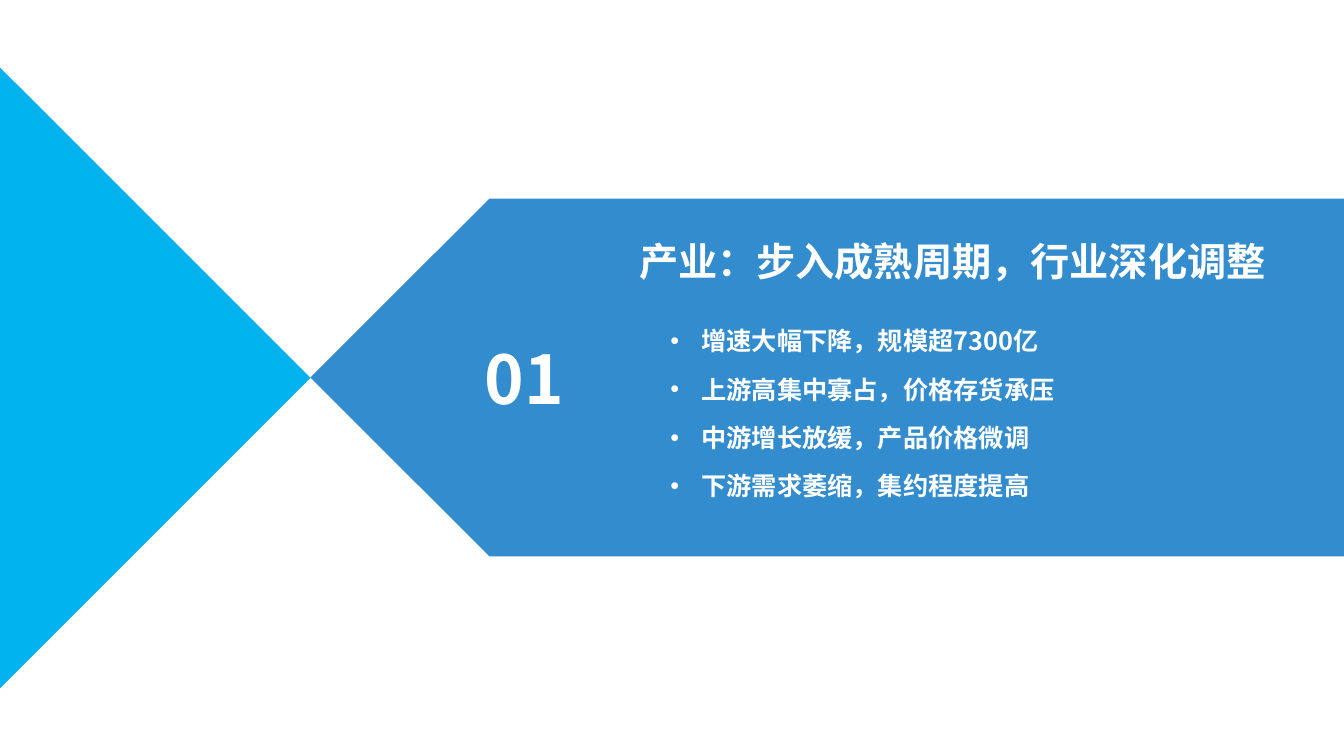
from dataclasses import dataclass

from lxml.etree import SubElement
from pptx import Presentation
from pptx.dml.color import RGBColor
from pptx.enum.shapes import MSO_SHAPE as SHAPE
from pptx.enum.text import MSO_ANCHOR as ANCHOR, MSO_AUTO_SIZE as FIT, PP_ALIGN as ALIGN
from pptx.oxml.ns import qn
from pptx.util import Pt

PX = 9144
CJK = "Noto Sans CJK SC"
LATIN = "Arial"
WHITE = "FFFFFF"
BLUE = "0170C1"
CYAN = "00B3EE"


@dataclass(frozen=True)
class Box:
    left: int
    top: int
    width: int
    height: int

    def emu(self) -> tuple[int, int, int, int]:
        return self.left * PX, self.top * PX, self.width * PX, self.height * PX


@dataclass(frozen=True)
class Bullet:
    text: str
    box: Box


def paint(fill, color: str) -> None:
    fill.solid()
    fill.fore_color.rgb = RGBColor.from_string(color)


def finish(sp, color: str) -> None:
    paint(sp.fill, color)
    sp.line.fill.background()
    sp.shadow.inherit = False


def add_run(p, text: str, size: int, font: str) -> None:
    r = p.add_run()
    r.text = text
    r.font.size = Pt(size)
    r.font.bold = True
    r.font.name = font
    paint(r.font.fill, WHITE)
    SubElement(r.font._element, qn("a:ea"), typeface=CJK)


def add_text(shapes, box: Box):
    tf = shapes.add_textbox(*box.emu()).text_frame
    tf.word_wrap = True
    tf.auto_size = FIT.SHAPE_TO_FIT_TEXT
    return tf.paragraphs[0]


def add_plate(shapes, box: Box) -> None:
    sp = shapes.add_shape(SHAPE.PENTAGON, *box.emu())
    finish(sp, BLUE)
    sp.element.spPr.find(qn("a:xfrm")).set("flipH", "1")
    color = sp.element.spPr.find(qn("a:solidFill"))[0]
    SubElement(color, qn("a:alpha"), val="80000")


def add_triangle(shapes, box: Box) -> None:
    builder = shapes.build_freeform(box.left, box.top, scale=PX)
    tip = (box.left + box.width, box.top + box.height / 2)
    builder.add_line_segments([tip, (box.left, box.top + box.height)])
    finish(builder.convert_to_shape(), CYAN)


def add_number(shapes, text: str, box: Box) -> None:
    p = add_text(shapes, box)
    p.alignment = ALIGN.CENTER
    add_run(p, text, 48, CJK)


def set_title(title, text: str, box: Box) -> None:
    title.left, title.top, title.width, title.height = box.emu()
    tf = title.text_frame
    tf.margin_left = tf.margin_top = tf.margin_right = tf.margin_bottom = 0
    tf.word_wrap = True
    tf.vertical_anchor = ANCHOR.TOP
    tf.auto_size = FIT.SHAPE_TO_FIT_TEXT
    p = tf.paragraphs[0]
    p.alignment = ALIGN.CENTER
    add_run(p, text, 28, LATIN)
    title.element.getparent().append(title.element)


def add_bullet(shapes, bullet: Bullet) -> None:
    p = add_text(shapes, bullet.box)
    pPr = p._p.get_or_add_pPr()
    pPr.set("marL", str(31 * PX))
    pPr.set("indent", str(-31 * PX))
    SubElement(pPr, qn("a:buFont"), typeface=LATIN)
    SubElement(pPr, qn("a:buChar"), char="•")
    add_run(p, bullet.text, 18, CJK)


POINTS = [
    "增速大幅下降，规模超7300亿",
    "上游高集中寡占，价格存货承压",
    "中游增长放缓，产品价格微调",
    "下游需求萎缩，集约程度提高",
]
BULLETS = [Bullet(text, Box(655, 318 + 48 * i, 526, 40)) for i, text in enumerate(POINTS)]


def main() -> None:
    prs = Presentation()
    prs.slide_width, prs.slide_height = 1333 * PX, 750 * PX
    s = prs.slides.add_slide(prs.slide_layouts[5])
    add_plate(s.shapes, Box(308, 197, 1026, 355))
    add_number(s.shapes, "01", Box(446, 330, 148, 91))
    set_title(s.shapes.title, "产业：步入成熟周期，行业深化调整", Box(585, 235, 719, 47))
    add_triangle(s.shapes, Box(0, 67, 308, 616))
    group = s.shapes.add_group_shape()
    for bullet in BULLETS:
        add_bullet(group.shapes, bullet)
    prs.save("out.pptx")


if __name__ == "__main__":
    main()
